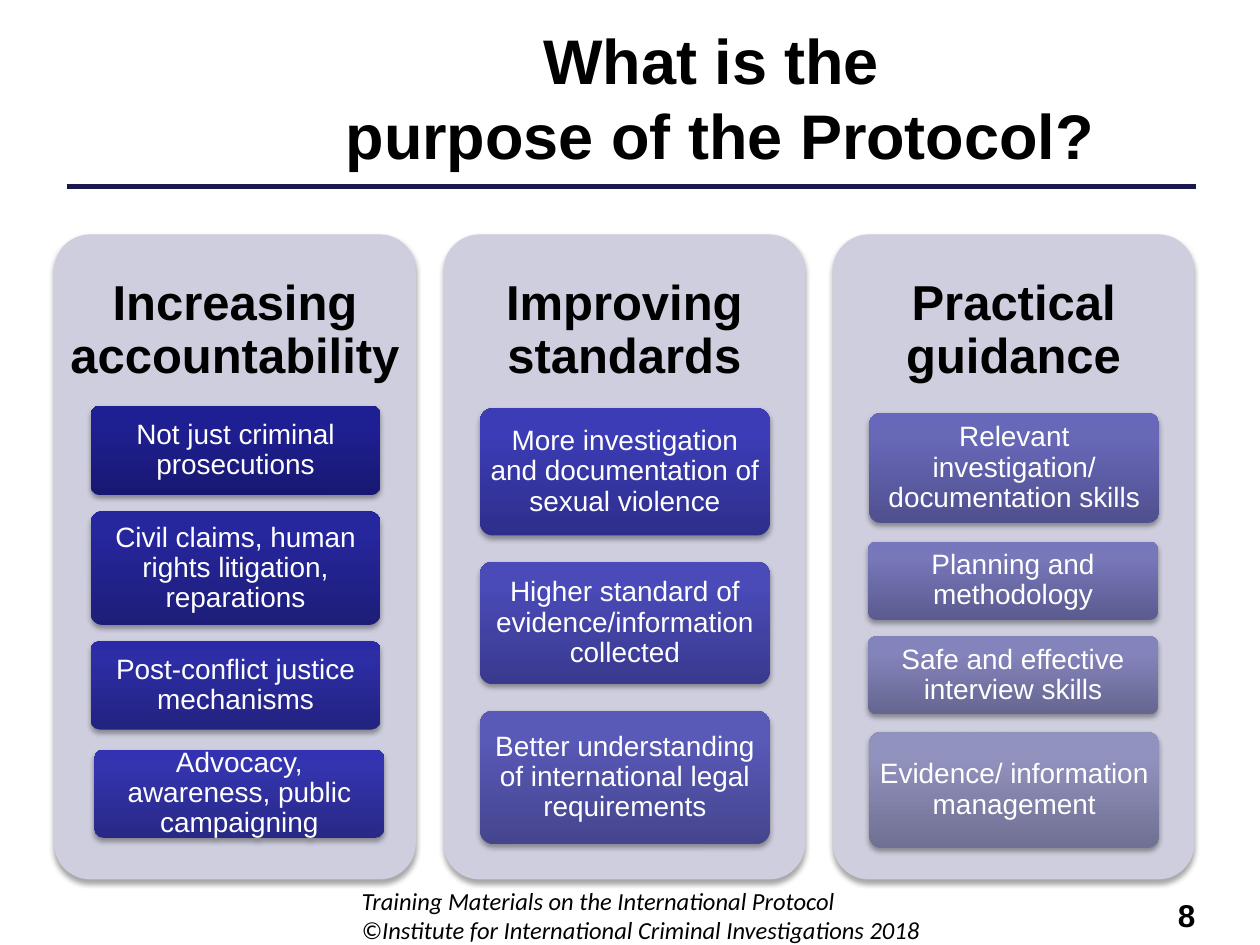
from copy import deepcopy

from lxml import etree
from pptx import Presentation
from pptx.dml.color import RGBColor
from pptx.enum.shapes import MSO_CONNECTOR, MSO_SHAPE
from pptx.enum.text import MSO_ANCHOR, PP_ALIGN
from pptx.oxml import parse_xml
from pptx.oxml.ns import nsdecls, qn
from pptx.util import Inches, Pt

ROUNDED = MSO_SHAPE.ROUNDED_RECTANGLE
STRAIGHT = MSO_CONNECTOR.STRAIGHT
MIDDLE, TOP = MSO_ANCHOR.MIDDLE, MSO_ANCHOR.TOP
CENTER, LEFT = PP_ALIGN.CENTER, PP_ALIGN.LEFT

BLACK = RGBColor(0x00, 0x00, 0x00)
WHITE = RGBColor(0xFF, 0xFF, 0xFF)
NAVY = RGBColor(0x19, 0x19, 0x4D)
PANEL_GREY = RGBColor(0xCE, 0xCE, 0xDE)

PANEL_LEFT, PANEL_TOP, PANEL_STEP = 0.43, 1.86, 3.09
PANEL_WIDTH, PANEL_HEIGHT, HEADING_HEIGHT = 2.87, 5.12, 1.54
CARD_WIDTH = 2.3
STOP_POSITIONS = (0, 0.8, 1)

# Each card: left, top, height, gradient from bottom to top, text
COLUMNS = [
    ("Increasing accountability", [
        (0.72, 3.22, 0.71, "181872 1F1F94 1D1D97", "Not just criminal prosecutions"),
        (0.72, 4.06, 0.9, "1D1D79 26269D 2424A0",
         "Civil claims, human rights litigation, reparations"),
        (0.72, 5.09, 0.7, "222280 2D2DA6 2A2AA9", "Post-conflict justice mechanisms"),
        (0.75, 5.95, 0.7, "282886 3434AE 3232B2",
         "Advocacy, awareness, public campaigning"),
    ]),
    ("Improving standards", [
        (3.81, 3.24, 1.01, "2E2E8C 3C3CB6 3A3AB9",
         "More investigation and documentation of sexual violence"),
        (3.81, 4.46, 0.97, "39398E 4A4AB8 4848BB",
         "Higher standard of evidence/information collected"),
        (3.81, 5.64, 1.06, "45458E 5959B8 5858BB",
         "Better understanding of international legal requirements"),
    ]),
    ("Practical guidance", [
        (6.9, 3.28, 0.87, "50508F 6868B9 6767BC",
         "Relevant investigation/ documentation skills"),
        (6.89, 4.3, 0.62, "5B5B90 7777BA 7676BD", "Planning and methodology"),
        (6.89, 5.05, 0.62, "666691 8484BC 8484BE", "Safe and effective interview skills"),
        (6.9, 5.81, 0.92, "707093 9292BF 9191C0", "Evidence/ information management"),
    ]),
]


def set_text(s, text, size, color=BLACK, font="Arial", bold=False, italic=False,
             align=CENTER, anchor=MIDDLE, spacing=None, insets=(0.1, 0.05)):
    tf = s.text_frame
    tf.text = text
    tf.word_wrap = True
    tf.vertical_anchor = anchor
    tf.margin_left = tf.margin_right = Inches(insets[0])
    tf.margin_top = tf.margin_bottom = Inches(insets[1])
    for p in tf.paragraphs:
        p.alignment = align
        p.line_spacing = spacing
        for r in p.runs:
            r.font.name, r.font.size = font, Pt(size)
            r.font.bold, r.font.italic = bold, italic
            r.font.color.rgb = color


def add_text(slide, left, top, width, height, text, size, **style):
    s = slide.shapes.add_textbox(Inches(left), Inches(top), Inches(width), Inches(height))
    set_text(s, text, size, **style)
    return s


def add_rounded_box(slide, left, top, width, height):
    """Add a borderless rounded box with a soft shadow below it."""
    s = slide.shapes.add_shape(
        ROUNDED, Inches(left), Inches(top), Inches(width), Inches(height))
    s.adjustments[0] = 0.1
    s.line.fill.background()
    s.shadow.inherit = False
    s._element.spPr.find(qn("a:effectLst")).append(parse_xml(
        f'<a:outerShdw {nsdecls("a")} blurRad="{Pt(3.1)}" dist="{Pt(1.8)}" '
        'dir="5400000" rotWithShape="0"><a:srgbClr val="000000">'
        '<a:alpha val="35000"/></a:srgbClr></a:outerShdw>'))
    return s


def fill_gradient(s, colors):
    """Fill from bottom to top with three colours."""
    s.fill.gradient()
    s.fill.gradient_angle = 90
    stop_list = s._element.spPr.find(".//" + qn("a:gsLst"))
    stop_list.append(deepcopy(stop_list[-1]))
    for stop, position, color in zip(s.fill.gradient_stops, STOP_POSITIONS, colors):
        stop.position = position
        stop.color.rgb = RGBColor.from_string(color)


def add_card(slide, left, top, height, colors, text):
    s = add_rounded_box(slide, left, top, CARD_WIDTH, height)
    fill_gradient(s, colors.split())
    set_text(s, text, 16, color=WHITE, spacing=0.9, insets=(0.04, 0.03))


def add_column(slide, left, heading, cards):
    panel = add_rounded_box(slide, left, PANEL_TOP, PANEL_WIDTH, PANEL_HEIGHT)
    panel.fill.solid()
    panel.fill.fore_color.rgb = PANEL_GREY
    add_text(slide, left, PANEL_TOP, PANEL_WIDTH, HEADING_HEIGHT, heading, 28,
             bold=True, spacing=0.9, insets=(0.12, 0.12))
    for card in cards:
        add_card(slide, *card)


def add_title(slide, text):
    s = slide.shapes.title
    s.left, s.top, s.width, s.height = map(Inches, (1.54, 0.13, 8.35, 1.28))
    set_text(s, text, 36, bold=True)


def add_rule(slide):
    s = slide.shapes.add_connector(
        STRAIGHT, Inches(0.53), Inches(1.48), Inches(9.49), Inches(1.48))
    s.line.color.rgb = NAVY
    s.line.width = Pt(2.5)
    etree.SubElement(s._element.spPr, qn("a:effectLst"))


def main():
    prs = Presentation()
    prs.slide_width, prs.slide_height = Inches(10), Inches(7.5)
    slide = prs.slides.add_slide(prs.slide_layouts[5])
    add_rule(slide)
    add_title(slide, "What is the \vpurpose of the Protocol?")
    for i, (heading, cards) in enumerate(COLUMNS):
        add_column(slide, PANEL_LEFT + i * PANEL_STEP, heading, cards)
    footer = add_text(
        slide, 2.4, 6.98, 5.35, 0.52,
        "Training Materials on the International Protocol\v"
        "©Institute for International Criminal Investigations 2018",
        14, font="Calibri", italic=True, align=LEFT, anchor=TOP)
    footer.text_frame.margin_left = Inches(0.47)
    add_text(slide, 9.25, 7.06, 0.39, 0.4, "8", 18, bold=True, align=LEFT, anchor=TOP)
    prs.save("out.pptx")


if __name__ == "__main__":
    main()
